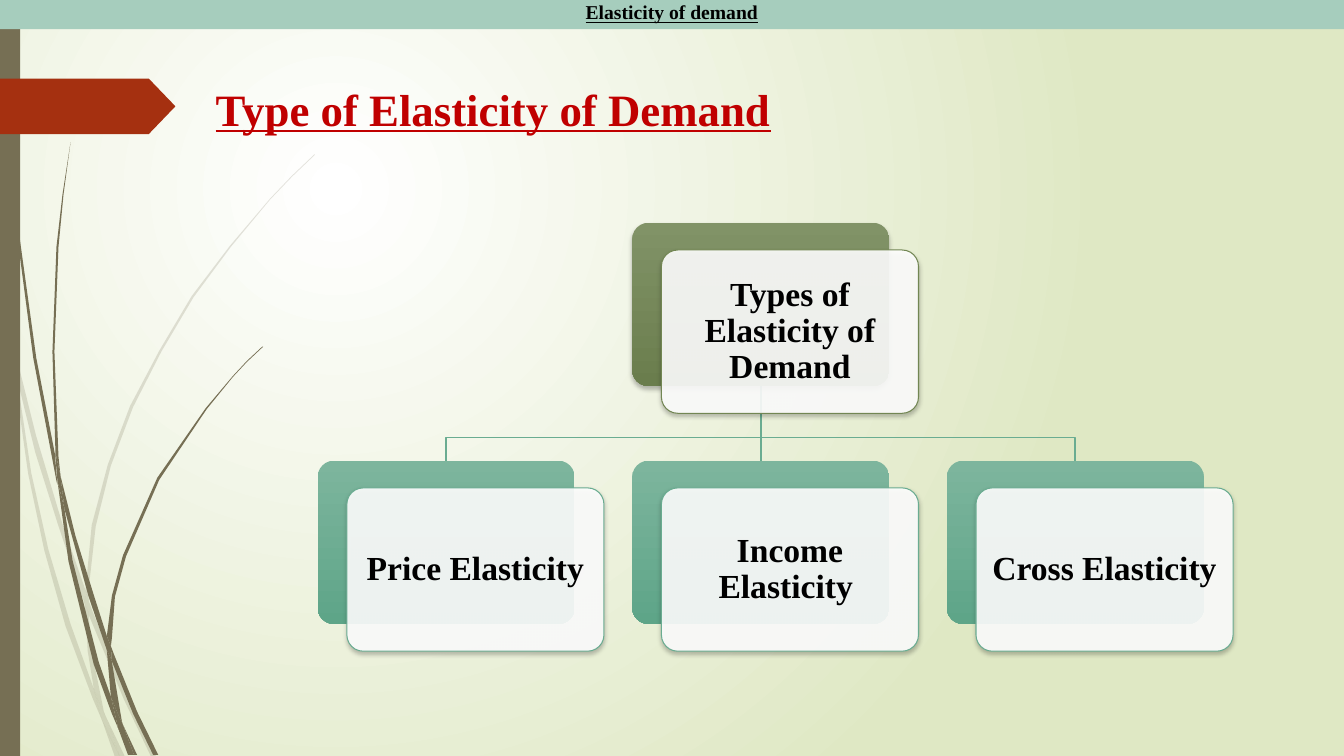
"""Build a slide showing the types of elasticity of demand as a tree."""
import lxml.etree
import pptx
import pptx.dml.color
import pptx.enum.shapes
import pptx.enum.text
import pptx.oxml.ns
import pptx.util

HEADER = "Elasticity of demand"
TITLE = "Type of Elasticity of Demand"
ROOT = "Types of Elasticity of Demand"
CHILDREN = ["Price Elasticity", "Income Elasticity ", "Cross Elasticity "]
FONT = "Times New Roman"
COLORS = {
    "white": "FFFFFF", "black": "000000", "back_edge": "DFE8C4",
    "grass": "766F54", "arrow": "A53010", "title": "C00000", "header": "A6CDBD",
    "root_top": "819367", "root_bottom": "6A7D4D", "root_line": "728653",
    "child_top": "7DB59D", "child_bottom": "5EA588", "child_line": "6AAC91",
}
PALE_GRASS = [
    [(.11, 3.5), (.09, 3.22), (0, 2.82), (0, 2.99), (.1, 3.44)],
    [(.58, 5.22), (.84, 5.99), (.85, 5.86), (.62, 5.2), (.36, 4.33), (.14, 3.45),
     (.17, 3.76), (.35, 4.49)],
    [(.92, 6.07), (.88, 5.96), (.88, 6.1), (1.23, 6.94), (1.5, 7.51), (1.55, 7.51), (1.27, 6.92)],
    [(1.19, 7.51), (1.24, 7.51), (1.05, 7.11)],
    [(.93, 6.83), (.7, 6.19), (.48, 5.45), (.31, 4.69), (.17, 3.76), (.11, 3.5), (.28, 4.7),
     (.44, 5.46), (.65, 6.21), (.92, 6.93), (1.01, 7.14), (.99, 7.07)],
    [(.84, 5.99), (.87, 6.46), (.93, 6.83), (.96, 6.92), (1.05, 7.11), (1.03, 7.06),
     (.91, 6.46), (.88, 6.1), (.88, 6.08)],
    [(.88, 5.84), (.95, 5.22), (1.1, 4.62), (1.32, 4.04), (1.6, 3.49), (1.92, 2.95),
     (2.29, 2.45), (2.68, 1.98), (2.9, 1.75), (3.12, 1.54), (3.12, 1.53), (2.89, 1.75),
     (2.68, 1.97), (2.28, 2.44), (1.9, 2.94), (1.58, 3.48), (1.29, 4.03), (1.07, 4.61),
     (.91, 5.21), (.85, 5.84), (.85, 5.86), (.88, 5.96)],
    [(1.01, 7.14), (1.14, 7.51), (1.19, 7.51)],
    [(.88, 6.08), (.88, 6.1), (.88, 5.96), (.85, 5.86), (.84, 5.99)],
    [(.96, 6.92), (.93, 6.83), (.99, 7.07), (1.01, 7.14), (1.19, 7.51), (1.05, 7.11)],
]
DARK_GRASS = [
    [(.07, 1.1), (.17, 2.33), (.33, 3.55), (.56, 4.77), (.57, 4.81), (.55, 4.57), (.55, 4.53),
     (.36, 3.55), (.19, 2.32), (.08, 1.09), (.05, .48), (.04, 0), (.03, 0), (.04, .48)],
    [(.88, 5.92), (1.06, 6.45), (1.06, 6.33), (1.06, 6.31), (.93, 5.9), (.75, 5.32),
     (.6, 4.72), (.64, 5.05)],
    [(1.13, 6.49), (1.1, 6.41), (1.11, 6.56), (1.32, 7.08), (1.52, 7.49), (1.57, 7.49),
     (1.36, 7.06)],
    [(1.1, 6.91), (.98, 6.57), (.72, 5.56), (.64, 5.05), (.57, 4.77), (.68, 5.57),
     (.93, 6.59), (1.11, 7.08), (1.17, 7.22), (1.16, 7.17)],
    [(.6, 4.72), (.58, 4.53), (.54, 3.49), (.58, 2.45), (.63, 1.93), (.7, 1.41),
     (.62, 1.93), (.56, 2.45), (.52, 3.49), (.55, 4.49)],
    [(1.33, 7.49), (1.36, 7.49), (1.22, 7.19)],
    [(.57, 4.77), (.64, 5.05), (.6, 4.72), (.55, 4.49), (.55, 4.53)],
    [(1.11, 6.33), (1.14, 5.92), (1.25, 5.52), (1.58, 4.76), (2.05, 4.06), (2.31, 3.74),
     (2.45, 3.59), (2.61, 3.44), (2.6, 3.44), (2.45, 3.58), (2.31, 3.73), (2.04, 4.05),
     (1.56, 4.74), (1.22, 5.51), (1.11, 5.91), (1.06, 6.31), (1.1, 6.41)],
    [(1.17, 7.22), (1.27, 7.49), (1.31, 7.49)],
    [(1.06, 6.45), (1.1, 6.91), (1.16, 7.06), (1.22, 7.19), (1.21, 7.16), (1.11, 6.56),
     (1.09, 6.51)],
    [(1.06, 6.45), (1.09, 6.51), (1.11, 6.56), (1.1, 6.41), (1.06, 6.31), (1.06, 6.33)],
    [(1.16, 7.06), (1.1, 6.91), (1.16, 7.17), (1.17, 7.22), (1.3, 7.49), (1.33, 7.49),
     (1.22, 7.19)],
]
SLIDE_W, SLIDE_H = 13.33, 7.5
CARD_W, CARD_H = 2.55, 1.62
FRONT_DX, FRONT_DY = .29, .27
FIRST_X, PITCH = 3.15, 3.12
ROOT_Y, CHILD_Y, BAR_Y = 2.21, 4.57, 4.34

Inches = pptx.util.Inches
SHAPES = pptx.enum.shapes.MSO_SHAPE
ALIGN = pptx.enum.text.PP_ALIGN
ANCHOR = pptx.enum.text.MSO_ANCHOR


def rgb(name):
    return pptx.dml.color.RGBColor.from_string(COLORS[name])


def add_xml(parent, tag, **attrs):
    child = lxml.etree.SubElement(parent, pptx.oxml.ns.qn(tag))
    for key, value in attrs.items():
        child.set(key, str(value))
    return child


def set_gradient(fill, first, last):
    fill.gradient()
    for stop, name in zip(fill.gradient_stops, (first, last)):
        stop.color.rgb = rgb(name)


def paint(s, name, alpha=100):
    s.shadow.inherit = False
    s.line.fill.background()
    s.fill.solid()
    s.fill.fore_color.rgb = rgb(name)
    if alpha < 100:
        color = s._element.spPr.find(".//" + pptx.oxml.ns.qn("a:srgbClr"))
        add_xml(color, "a:alpha", val=alpha * 1000)


def set_line(s, name, width):
    s.line.color.rgb = rgb(name)
    s.line.width = pptx.util.Pt(width)


def add_shape(slide, kind, x, y, w, h):
    s = slide.shapes.add_shape(kind, Inches(x), Inches(y), Inches(w), Inches(h))
    s.shadow.inherit = False
    s.line.fill.background()
    return s


def add_outline(slide, points, close):
    corners = [(Inches(x), Inches(y)) for x, y in points]
    builder = slide.shapes.build_freeform(*corners[0])
    builder.add_line_segments(corners[1:], close=close)
    return builder.convert_to_shape()


def write(s, text, size, color, align, anchor, underline=False):
    tf = s.text_frame
    tf.word_wrap = True
    tf.vertical_anchor = anchor
    p = tf.paragraphs[0]
    p.alignment = align
    r = p.add_run()
    r.text = text
    r.font.name = FONT
    r.font.size = pptx.util.Pt(size)
    r.font.bold = True
    r.font.underline = underline
    r.font.color.rgb = rgb(color)
    return p


def add_branch(slide, start, end):
    points = [(start, ROOT_Y + CARD_H), (start, BAR_Y), (end, BAR_Y), (end, CHILD_Y)]
    s = add_outline(slide, points, False)
    s.shadow.inherit = False
    s.fill.background()
    set_line(s, "child_line", 1.25)


def add_shadow(s):
    effects = s._element.spPr.find(pptx.oxml.ns.qn("a:effectLst"))
    shadow = add_xml(effects, "a:outerShdw", blurRad=pptx.util.Pt(3),
                     dist=pptx.util.Pt(2), dir=5400000, rotWithShape=0)
    color = add_xml(shadow, "a:srgbClr", val=COLORS["black"])
    add_xml(color, "a:alpha", val=25000)


def add_card(slide, x, y, text, level):
    kind = SHAPES.ROUNDED_RECTANGLE
    back = add_shape(slide, kind, x, y, CARD_W, CARD_H)
    front = add_shape(slide, kind, x + FRONT_DX, y + FRONT_DY, CARD_W, CARD_H)
    back.adjustments[0] = front.adjustments[0] = .1
    set_gradient(back.fill, level + "_top", level + "_bottom")
    back.fill.gradient_angle = 270
    if level == "root":
        add_shadow(back)
    paint(front, "white", 90)
    set_line(front, level + "_line", .75)
    add_shadow(front)
    tf = front.text_frame
    tf.margin_left = tf.margin_right = tf.margin_top = tf.margin_bottom = Inches(.1)
    write(front, text, 24, "black", ALIGN.CENTER, ANCHOR.MIDDLE).line_spacing = .9


def set_background(slide):
    set_gradient(slide.background.fill, "white", "back_edge")
    grad = slide._element.find(".//" + pptx.oxml.ns.qn("a:gradFill"))
    grad.remove(grad.find(pptx.oxml.ns.qn("a:lin")))
    circle = add_xml(grad, "a:path", path="circle")
    add_xml(circle, "a:fillToRect", l=50000, t=50000, r=100000, b=100000)


def main():
    prs = pptx.Presentation()
    prs.slide_width, prs.slide_height = Inches(SLIDE_W), Inches(SLIDE_H)
    slide = prs.slides.add_slide(prs.slide_layouts[6])
    set_background(slide)
    for pieces, alpha in ((PALE_GRASS, 20), (DARK_GRASS, 100)):
        for points in pieces:
            paint(add_outline(slide, points, True), "grass", alpha)
    paint(add_shape(slide, SHAPES.RECTANGLE, 0, 0, .2, SLIDE_H), "grass")
    arrow = add_shape(slide, SHAPES.PENTAGON, 0, .78, 1.74, .55)
    arrow.adjustments[0] = .48
    paint(arrow, "arrow")
    title = slide.shapes.add_textbox(Inches(2.04), Inches(.76), Inches(5.86), Inches(.82))
    write(title, TITLE, 32, "title", ALIGN.LEFT, ANCHOR.TOP, True)
    lefts = [FIRST_X + i * PITCH for i in range(len(CHILDREN))]
    centers = [x + CARD_W / 2 for x in lefts]
    for x in reversed(centers):
        add_branch(slide, centers[1], x)
    add_card(slide, lefts[1], ROOT_Y, ROOT, "root")
    for x, text in zip(lefts, CHILDREN):
        add_card(slide, x, CHILD_Y, text, "child")
    header = add_shape(slide, SHAPES.RECTANGLE, 0, -.05, SLIDE_W, .34)
    paint(header, "header")
    write(header, HEADER, 14, "black", ALIGN.CENTER, ANCHOR.MIDDLE, True)
    prs.save("out.pptx")


if __name__ == "__main__":
    main()
